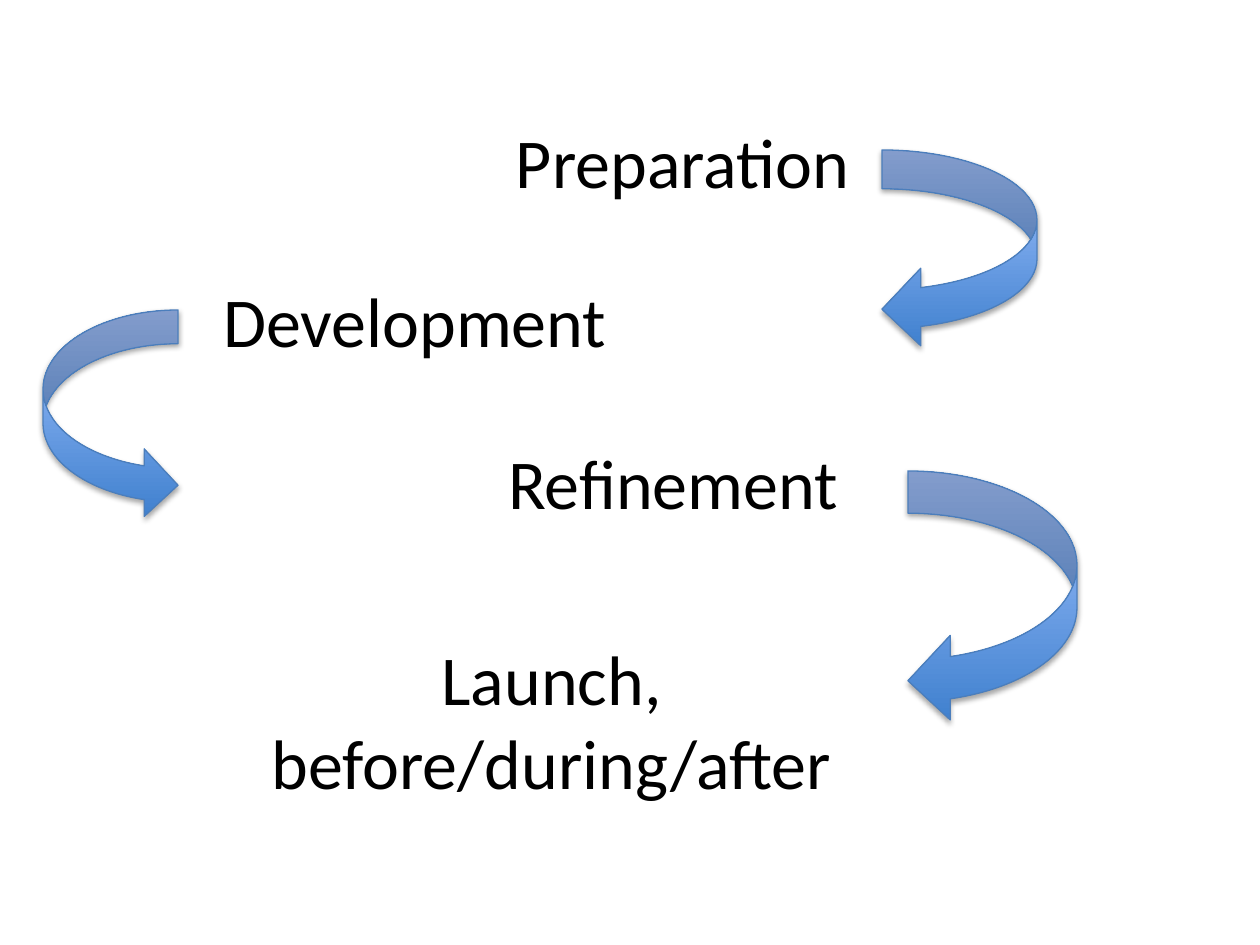
from lxml import etree
from pptx import Presentation
from pptx.dml.color import RGBColor
from pptx.enum.shapes import MSO_SHAPE
from pptx.enum.text import MSO_ANCHOR, MSO_AUTO_SIZE, PP_ALIGN
from pptx.oxml.ns import qn
from pptx.util import Emu, Pt

ARROW = MSO_SHAPE.CURVED_RIGHT_ARROW
FRAME = {
    "word_wrap": True,
    "auto_size": MSO_AUTO_SIZE.NONE,
    "vertical_anchor": MSO_ANCHOR.TOP,
}
PARA = {"alignment": PP_ALIGN.CENTER, "space_before": Pt(8)}
FONT = {"name": "Calibri", "size": Pt(40)}

# Boxes are left, top, width, height in px
STEPS = [
    ("Preparation", (411, 112, 543, 102)),
    ("Development", (57, 271, 716, 169)),
    ("Refinement", (315, 433, 716, 169)),
    ("Launch, before/during/after", (161, 629, 781, 169)),
]
TURNS = [
    ((882, 150, 155, 198), True),
    ((43, 310, 135, 209), False),
    ((908, 471, 169, 252), True),
]


def px(n):
    return Emu(round(n * 914400 / 126))


def tint(color, code):
    color.rgb = RGBColor.from_string(code)


def put(item, values):
    for name, value in values.items():
        setattr(item, name, value)


def step(shape, text, box):
    """Place a text shape and fill it with one centred step name."""
    put(shape, dict(zip(("left", "top", "width", "height"), map(px, box))))
    frame = shape.text_frame
    put(frame, FRAME)
    frame.text = text
    para = frame.paragraphs[0]
    put(para, PARA)
    props = para._p.get_or_add_pPr()
    props.set("marL", "0")
    props.set("indent", "0")
    etree.SubElement(props, qn("a:buNone"))
    font = para.runs[0].font
    put(font, FONT)
    tint(font.color, "000000")


def turn(slide, box, flip):
    """Draw a curved arrow that leads to the next step; the theme gives its shadow."""
    arrow = slide.shapes.add_shape(ARROW, *map(px, box))
    if flip:
        arrow._element.spPr.xfrm.set("flipH", "1")
    arrow.fill.gradient()
    arrow.fill.gradient_angle = 90
    for stop, (place, code) in zip(
        arrow.fill.gradient_stops, ((0, "3F80CE"), (1, "A4C4FF"))
    ):
        stop.position = place
        tint(stop.color, code)
    tint(arrow.line.color, "4B7EBC")
    arrow.line.width = Pt(0.75)


def main():
    deck = Presentation()
    put(deck, {"slide_width": px(1260), "slide_height": px(945)})
    slide = deck.slides.add_slide(deck.slide_layouts[1])
    title = slide.shapes.title._element
    title.getparent().remove(title)
    body = slide.placeholders[1]
    for i, (text, box) in enumerate(STEPS):
        shape = slide.shapes.add_textbox(*map(px, box)) if i else body
        step(shape, text, box)
    for box, flip in TURNS:
        turn(slide, box, flip)
    deck.save("out.pptx")


if __name__ == "__main__":
    main()
